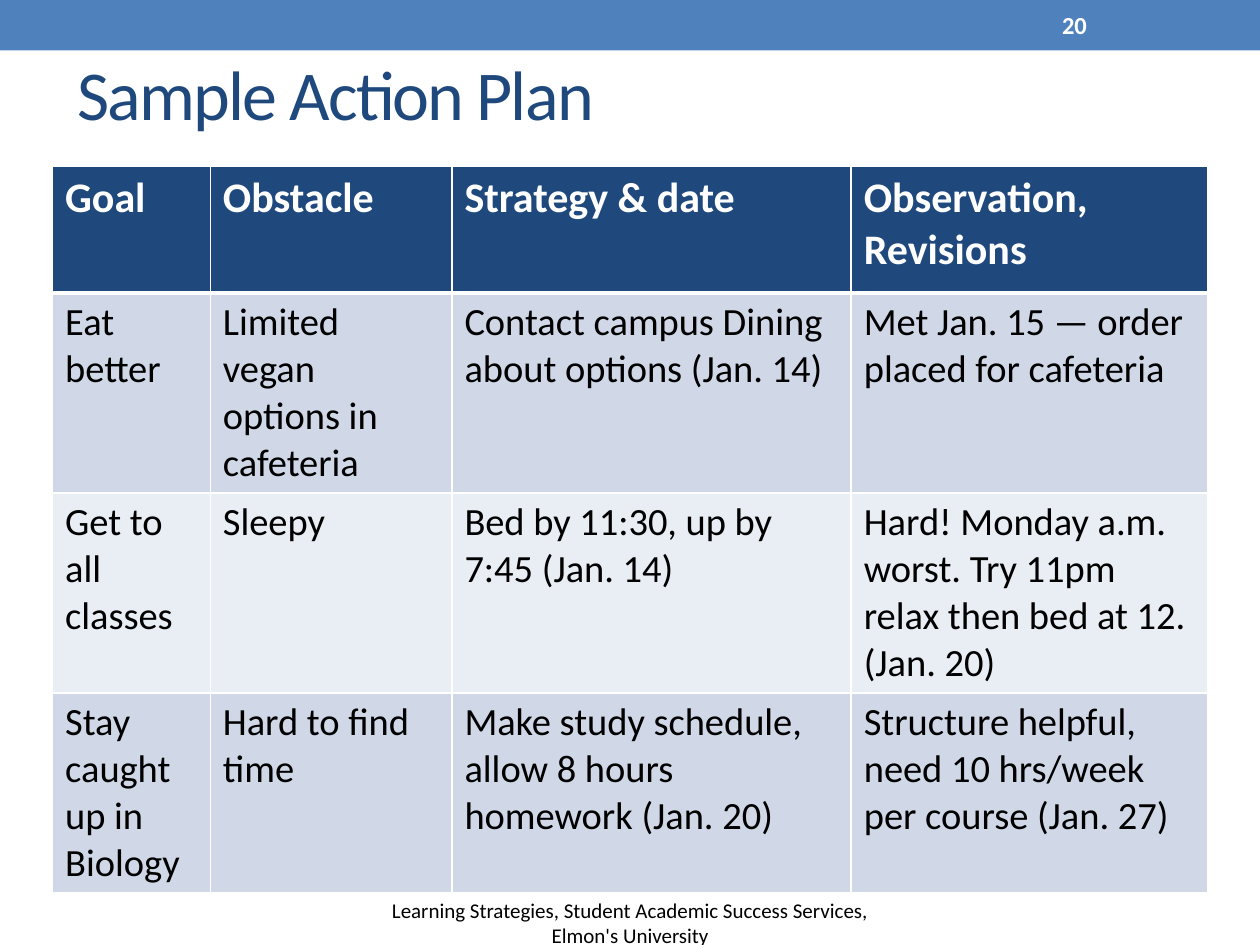
"""Builds the sample action plan slide."""
import pptx
import pptx.dml.color
import pptx.enum.shapes
import pptx.enum.text
import pptx.oxml.ns
import pptx.util
from lxml import etree
from pptx.util import Cm

NAVY = pptx.dml.color.RGBColor(0x1F, 0x49, 0x7D)
BLUE = pptx.dml.color.RGBColor(0x4F, 0x81, 0xBD)
PALE = pptx.dml.color.RGBColor(0xD0, 0xD8, 0xE8)
PALER = pptx.dml.color.RGBColor(0xE9, 0xED, 0xF4)
WHITE = pptx.dml.color.RGBColor(0xFF, 0xFF, 0xFF)
BLACK = pptx.dml.color.RGBColor(0, 0, 0)
ALIGN = pptx.enum.text.PP_ALIGN
MIDDLE = pptx.enum.text.MSO_ANCHOR.MIDDLE

PLAN = [
    ["Goal", "Obstacle", "Strategy & date", "Observation, Revisions"],
    ["Eat better", "Limited vegan options in cafeteria",
     "Contact campus Dining about options (Jan. 14)",
     "Met Jan. 15 — order placed for cafeteria"],
    ["Get to all classes", "Sleepy", "Bed by 11:30, up by 7:45 (Jan. 14)",
     "Hard! Monday a.m. worst. Try 11pm relax then bed at 12. (Jan. 20)"],
    ["Stay caught up in Biology", "Hard to find time",
     "Make study schedule, allow 8 hours homework (Jan. 20)",
     "Structure helpful, need 10 hrs/week per course (Jan. 27)"],
]


class SlideBuilder:
    def __init__(self, slide, font="Calibri"):
        self.slide = slide
        self.font = font

    def style_text(self, frame, text, size, color, bold=False, align=ALIGN.LEFT):
        frame.text = text
        frame.word_wrap = True
        para = frame.paragraphs[0]
        para.alignment = align
        span = para.runs[0]
        span.font.name = self.font
        span.font.size = pptx.util.Pt(size)
        span.font.bold = bold
        span.font.color.rgb = color
        return span

    def title(self, text, left, top, width, height):
        box = self.slide.shapes.title
        box.left, box.top, box.width, box.height = left, top, width, height
        span = self.style_text(box.text_frame, text, 40, NAVY)
        span._r.get_or_add_rPr().set("spc", "-100")
        box.text_frame.auto_size = pptx.enum.text.MSO_AUTO_SIZE.NONE
        box.text_frame.vertical_anchor = MIDDLE

    def bar(self, left, top, width, height, color):
        box = self.slide.shapes.add_shape(
            pptx.enum.shapes.MSO_SHAPE.RECTANGLE, left, top, width, height)
        box.shadow.inherit = False
        box.fill.solid()
        box.fill.fore_color.rgb = color
        box.line.fill.background()

    def label(self, text, left, top, width, height, size, color, **style):
        box = self.slide.shapes.add_textbox(left, top, width, height)
        self.style_text(box.text_frame, text, size, color, **style)
        box.text_frame.vertical_anchor = MIDDLE

    def border(self, cell, side, points):
        properties = cell._tc.get_or_add_tcPr()
        line = etree.SubElement(properties, pptx.oxml.ns.qn(f"a:ln{side}"),
                                w=str(pptx.util.Pt(points)))
        fill = etree.SubElement(line, pptx.oxml.ns.qn("a:solidFill"))
        etree.SubElement(fill, pptx.oxml.ns.qn("a:srgbClr"), val=str(WHITE))

    def table(self, rows, left, top, widths, heights):
        table = self.slide.shapes.add_table(
            len(rows), len(widths), left, top, sum(widths), sum(heights)).table
        for column, width in zip(table.columns, widths):
            column.width = width
        for index, (row, height) in enumerate(zip(table.rows, heights)):
            row.height = height
            header = index == 0
            for cell, text in zip(row.cells, rows[index]):
                for side in "LRTB":
                    thick = (index, side) in ((0, "B"), (1, "T"))
                    self.border(cell, side, 3 if thick else 1)
                cell.fill.solid()
                cell.fill.fore_color.rgb = (
                    NAVY if header else PALE if index % 2 else PALER)
                self.style_text(cell.text_frame, text, 24 if header else 22,
                                WHITE if header else BLACK, bold=header)


def main():
    deck = pptx.Presentation()
    deck.slide_width, deck.slide_height = Cm(25.4), Cm(19.05)
    page = SlideBuilder(deck.slides.add_slide(deck.slide_layouts[5]))
    page.bar(Cm(0), Cm(0), deck.slide_width, Cm(1.02), BLUE)
    page.title("Sample Action Plan", Cm(1.3), Cm(1.09), Cm(22.86), Cm(1.57))
    page.table(PLAN, Cm(1.06), Cm(3.36),
               [Cm(3.18), Cm(4.87), Cm(8.05), Cm(7.18)],
               [Cm(2.55)] + [Cm(4.03)] * 3)
    page.label("Learning Strategies, Student Academic Success Services, "
               "Elmon's University", Cm(6.99), Cm(18.14), Cm(11.43), Cm(0.91),
               12, BLACK, align=ALIGN.CENTER)
    page.label("20", Cm(21.16), Cm(0.05), Cm(2.97), Cm(0.91),
               14, WHITE, bold=True)
    deck.save("out.pptx")


if __name__ == "__main__":
    main()
